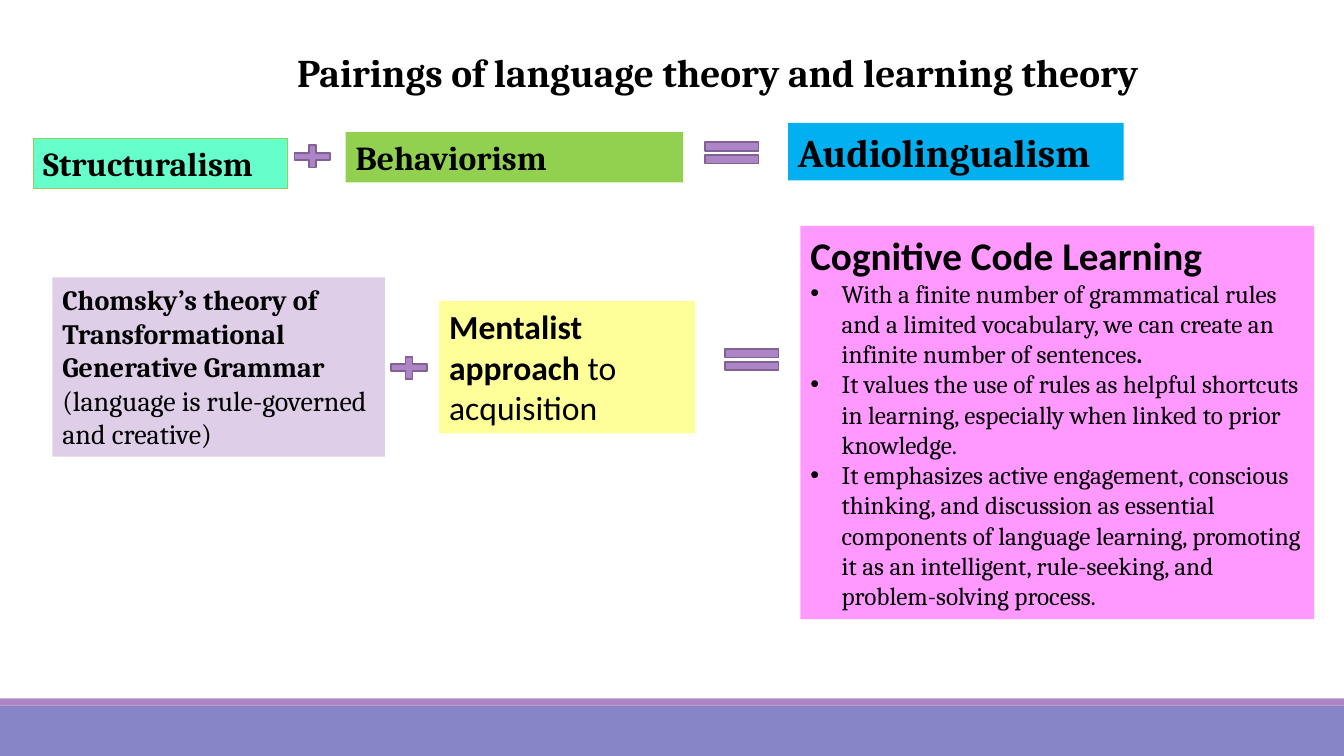
from dataclasses import dataclass

from lxml import etree
from pptx import Presentation
from pptx import util as u
from pptx.dml.color import RGBColor
from pptx.enum import shapes, text
from pptx.oxml import ns

BLACK = RGBColor(0x00, 0x00, 0x00)
MINT = RGBColor(0x66, 0xFF, 0xCC)
GREEN = RGBColor(0x92, 0xD0, 0x50)
BLUE = RGBColor(0x00, 0xB0, 0xF0)
LILAC = RGBColor(0xDE, 0xCE, 0xE8)
YELLOW = RGBColor(0xFF, 0xFF, 0x99)
PINK = RGBColor(0xFF, 0x99, 0xFF)
PURPLE = RGBColor(0xAD, 0x84, 0xC6)
DARK_PURPLE = RGBColor(0x80, 0x62, 0x92)
INDIGO = RGBColor(0x87, 0x84, 0xC7)

SERIF, SANS = "Cambria", "Calibri"
PLUS_SIZE = (1.22, 0.76)
EQUAL_SIZE = (1.83, 0.91)

LEARNING_POINTS = [
    [("With a finite number of grammatical rules and a limited vocabulary, "
      "we can create an infinite number of sentences", False), (".", True)],
    [("It values the use of rules as helpful shortcuts in learning, "
      "especially when linked to prior knowledge.", False)],
    [("It emphasizes active engagement, conscious thinking, and discussion "
      "as essential components of language learning, promoting it as an "
      "intelligent, rule-seeking, and problem-solving process.", False)],
]


@dataclass
class Box:
    """A rectangle in centimetres."""
    left: float
    top: float
    width: float
    height: float

    def inner(self, left, top, width, height):
        return Box(self.left + left, self.top + top, width, height)

    def lengths(self):
        return [u.Cm(v) for v in (self.left, self.top, self.width, self.height)]


def move(shape, box):
    shape.left, shape.top, shape.width, shape.height = box.lengths()


def prepare_frame(shape):
    frame = shape.text_frame
    frame.word_wrap = True
    frame.auto_size = text.MSO_AUTO_SIZE.NONE
    frame.vertical_anchor = text.MSO_ANCHOR.TOP
    frame.margin_left = frame.margin_right = u.Cm(0.25)
    frame.margin_top = frame.margin_bottom = u.Cm(0.13)
    return frame


def write(para, spans, size, font):
    """Fill a paragraph with (wording, bold) spans."""
    para.alignment = text.PP_ALIGN.LEFT
    para.space_before = u.Pt(0)
    for wording, bold in spans:
        span = para.add_run()
        span.text = wording
        span.font.size = u.Pt(size)
        span.font.name = font
        span.font.bold = bold
        span.font.color.rgb = BLACK


def set_bullet(para, mark=None):
    props = para._p.get_or_add_pPr()
    indent = u.Cm(0.79) if mark else 0
    props.set("marL", str(indent))
    props.set("indent", str(-indent))
    if mark:
        etree.SubElement(props, ns.qn("a:buFont")).set("typeface", "Arial")
        etree.SubElement(props, ns.qn("a:buChar")).set("char", mark)
    else:
        etree.SubElement(props, ns.qn("a:buNone"))


def add_block(page, kind, box, fill, line=None, line_width=0.75):
    shape = page.shapes.add_shape(kind, *box.lengths())
    shape.shadow.inherit = False
    shape.fill.solid()
    shape.fill.fore_color.rgb = fill
    if line is None:
        shape.line.fill.background()
    else:
        shape.line.color.rgb = line
        shape.line.width = u.Pt(line_width)
    return shape


def add_label(page, box, fill, spans, size, font=SERIF, line=None):
    shape = add_block(page, shapes.MSO_SHAPE.RECTANGLE, box, fill, line)
    write(prepare_frame(shape).paragraphs[0], spans, size, font)


def add_signs(page, plus, equal):
    for kind, box in ((shapes.MSO_SHAPE.MATH_PLUS, plus),
                      (shapes.MSO_SHAPE.MATH_EQUAL, equal)):
        add_block(page, kind, box, PURPLE, DARK_PURPLE, 1.25)


def add_footer_bands(page, box):
    stripe = 0.18
    for band, fill in ((box.inner(0, stripe, box.width, box.height - stripe), INDIGO),
                       (box.inner(0, 0, box.width, stripe), PURPLE)):
        add_block(page, shapes.MSO_SHAPE.RECTANGLE, band, fill)


def add_title(page, box):
    title = page.shapes.title
    move(title, box)
    write(prepare_frame(title).paragraphs[0],
          [("Pairings of language theory and learning theory", True)], 28, SERIF)


def add_audiolingual_row(page, box):
    add_label(page, box.inner(0, 0.38, 6.4, 1.27), MINT,
              [("Structuralism", True)], 24, line=GREEN)
    add_label(page, box.inner(7.87, 0.23, 8.51, 1.27), GREEN,
              [("Behaviorism", True)], 24)
    add_label(page, box.inner(19.02, 0, 8.46, 1.45), BLUE,
              [("Audiolingualism", True)], 28)
    add_signs(page, box.inner(6.42, 0.46, *PLUS_SIZE),
              box.inner(16.69, 0.3, *EQUAL_SIZE))


def add_cognitive_row(page, box):
    add_label(page, box.inner(0, 1.3, 8.38, 4.52), LILAC,
              [("Chomsky’s theory of Transformational Generative Grammar ", True),
               ("(language is rule-governed and creative)", False)], 20)
    add_label(page, box.inner(9.75, 1.9, 6.45, 3.33), YELLOW,
              [("Mentalist approach ", True), ("to acquisition", False)], 24, SANS)
    add_signs(page, box.inner(8.38, 3.2, *PLUS_SIZE),
              box.inner(16.71, 2.92, *EQUAL_SIZE))
    add_learning_list(page, box.inner(18.85, 0, 12.95, 9.91))


def add_learning_list(page, box):
    body = page.placeholders[1]
    move(body, box)
    body.fill.solid()
    body.fill.fore_color.rgb = PINK
    frame = prepare_frame(body)
    heading = frame.paragraphs[0]
    write(heading, [("Cognitive Code Learning", True)], 28, SANS)
    set_bullet(heading)
    for spans in LEARNING_POINTS:
        para = frame.add_paragraph()
        write(para, spans, 18, SERIF)
        set_bullet(para, "•")


def main():
    deck = Presentation()
    deck.slide_width, deck.slide_height = u.Cm(33.87), u.Cm(19.05)
    page = deck.slides.add_slide(deck.slide_layouts[1])
    add_footer_bands(page, Box(0, 17.6, 33.87, 1.45))
    add_title(page, Box(7.24, 1.09, 22.58, 1.45))
    add_audiolingual_row(page, Box(0.84, 3.1, 27.48, 1.65))
    add_cognitive_row(page, Box(1.32, 5.69, 31.8, 9.91))
    deck.save("out.pptx")


if __name__ == "__main__":
    main()
